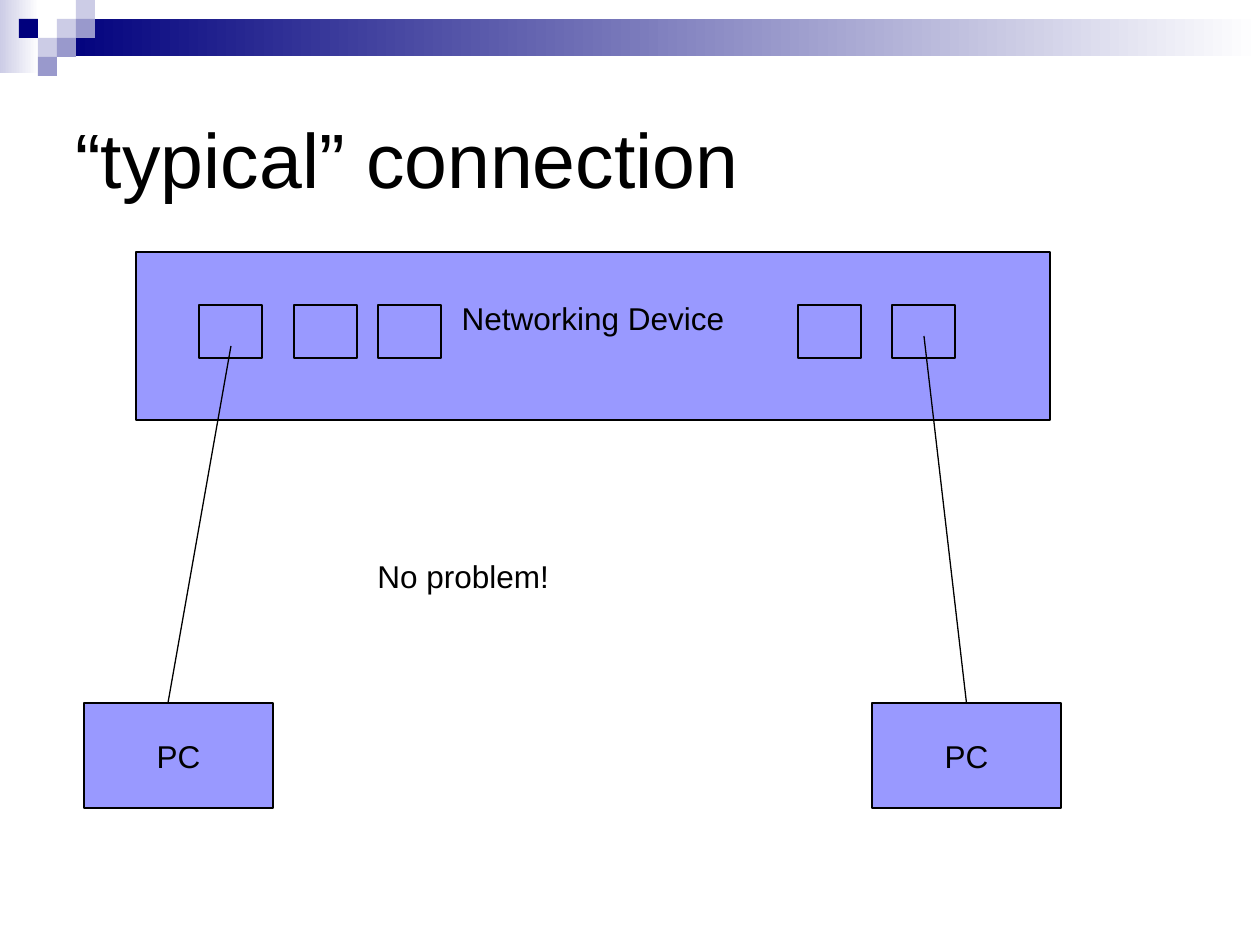
from lxml import etree
from pptx import Presentation
from pptx.dml.color import RGBColor
from pptx.enum.shapes import MSO_CONNECTOR, MSO_SHAPE
from pptx.enum.text import MSO_ANCHOR, PP_ALIGN
from pptx.oxml.ns import qn
from pptx.util import Pt

RECT = MSO_SHAPE.RECTANGLE
STRAIGHT = MSO_CONNECTOR.STRAIGHT
MIDDLE, TOP = MSO_ANCHOR.MIDDLE, MSO_ANCHOR.TOP
LEFT, CENTER = PP_ALIGN.LEFT, PP_ALIGN.CENTER

BLACK = RGBColor(0x00, 0x00, 0x00)
WHITE = RGBColor(0xFF, 0xFF, 0xFF)
NAVY = RGBColor(0x00, 0x00, 0x7D)
PALE = RGBColor(0xCC, 0xCC, 0xE6)
MID = RGBColor(0x99, 0x99, 0xCC)
LILAC = RGBColor(0x99, 0x99, 0xFF)

PX_PER_INCH = 126
FONT = "Arial"

# Boxes are left, top, width, height in px
BANDS = [((0, 0, 39, 73), PALE), ((57, 19, 1203, 37), NAVY)]
CELL = 19
CELLS = [  # column, row, colour
    (3, 1, PALE), (4, 0, PALE), (4, 1, MID), (2, 2, PALE),
    (1, 1, NAVY), (3, 2, MID), (2, 3, MID),
]
TITLE = ("“typical” connection", (63, 63, 1134, 189))
NOTE = ("No problem!", (365, 551, 197, 50))
DEVICE = ("Networking Device", (136, 252, 914, 168))
DEVICE_LIFT = 42  # bottom inset that raises the device label
PC_LABEL, PC_TOP, PC_SIZE = "PC", 703, (189, 105)
PC_LEFTS = [84, 872]
PORT_TOP, PORT_SIZE = 305, (63, 53)
PORT_LEFTS = [199, 294, 378, 798, 892]
CABLES = [((168, 703), (231, 346)), ((966, 703), (924, 336))]


def px(n):
    return round(n * 914400 / PX_PER_INCH)


def emu(values):
    return [px(v) for v in values]


def add_rect(slide, box, color, fade=False, outline=False):
    s = slide.shapes.add_shape(RECT, *emu(box))
    s.shadow.inherit = False
    if fade:
        s.fill.gradient()
        s.fill.gradient_angle = 0
        for stop, rgb in zip(s.fill.gradient_stops, (color, WHITE)):
            stop.color.rgb = rgb
    else:
        s.fill.solid()
        s.fill.fore_color.rgb = color
    if outline:
        s.line.color.rgb = BLACK
        s.line.width = Pt(0.75)
    else:
        s.line.fill.background()
    return s


def set_text(s, text, size=18, align=CENTER, anchor=MIDDLE, wrap=False):
    tf = s.text_frame
    tf.word_wrap = wrap
    tf.vertical_anchor = anchor
    p = tf.paragraphs[0]
    p.alignment = align
    r = p.add_run()
    r.text = text
    for name, value in {"name": FONT, "size": Pt(size)}.items():
        setattr(r.font, name, value)
    r.font.color.rgb = BLACK


def add_cable(slide, start, end):
    c = slide.shapes.add_connector(STRAIGHT, *emu(start + end))
    c.line.color.rgb = BLACK
    c.line.width = Pt(0.75)
    etree.SubElement(c._element.spPr, qn("a:effectLst"))
    return c


def main():
    prs = Presentation()
    prs.slide_width, prs.slide_height = emu((1260, 945))
    slide = prs.slides.add_slide(prs.slide_layouts[6])

    for box, color in BANDS:
        add_rect(slide, box, color, fade=True)
    for col, row, color in CELLS:
        add_rect(slide, (col * CELL, row * CELL, CELL, CELL), color)

    text, box = TITLE
    set_text(slide.shapes.add_textbox(*emu(box)), text, 44, LEFT, wrap=True)

    pcs = [add_rect(slide, (x, PC_TOP, *PC_SIZE), LILAC, outline=True)
           for x in PC_LEFTS]
    for pc in pcs:
        set_text(pc, PC_LABEL)

    text, box = DEVICE
    device = add_rect(slide, box, LILAC, outline=True)
    set_text(device, text)
    device.text_frame.margin_bottom = px(DEVICE_LIFT)
    for x in PORT_LEFTS:
        add_rect(slide, (x, PORT_TOP, *PORT_SIZE), LILAC, outline=True)

    cables = [add_cable(slide, *ends) for ends in CABLES]
    cables[1].begin_connect(pcs[1], 0)

    text, box = NOTE
    set_text(slide.shapes.add_textbox(*emu(box)), text, align=LEFT, anchor=TOP)

    prs.save("out.pptx")


if __name__ == "__main__":
    main()
